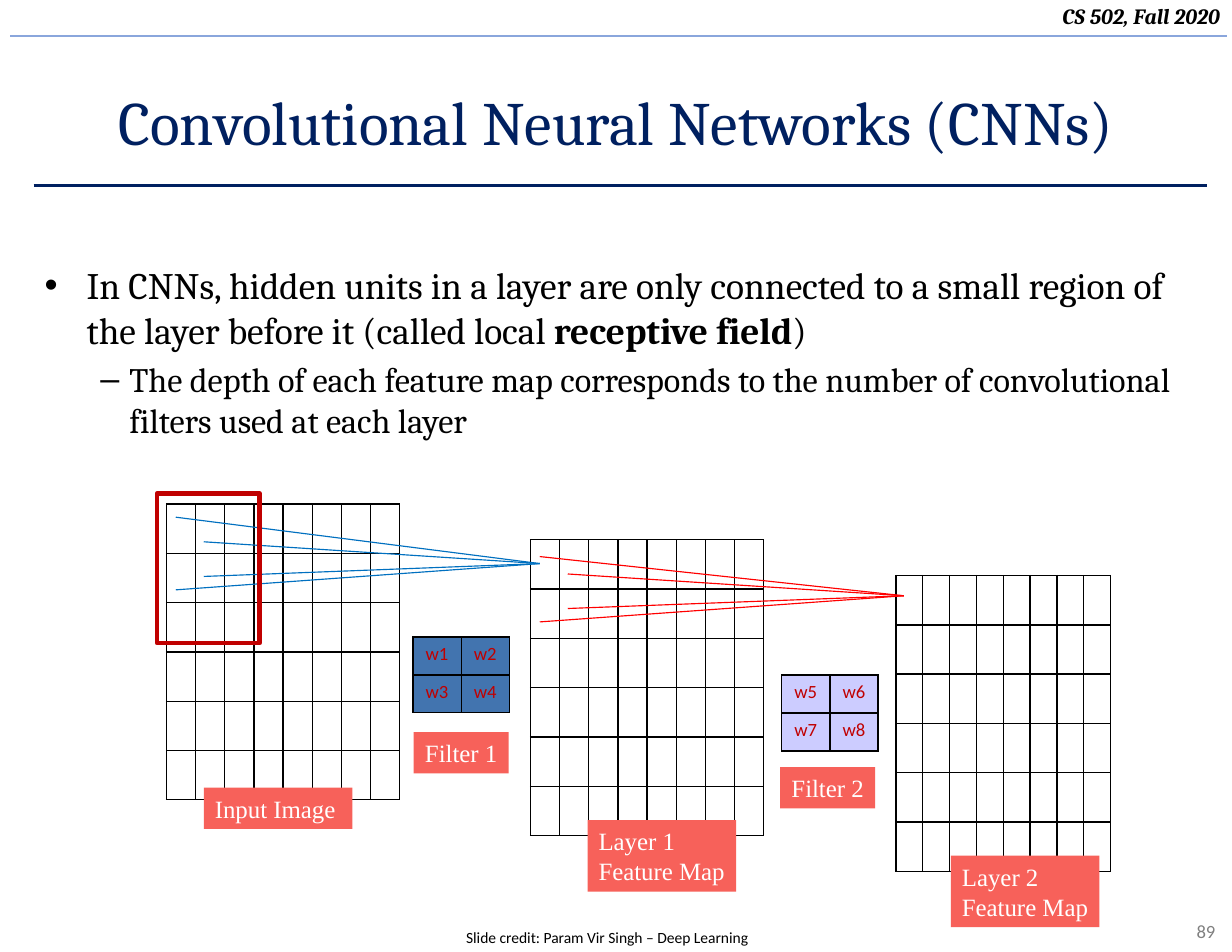
from lxml.etree import SubElement
from pptx import Presentation
from pptx.dml.color import RGBColor
from pptx.enum.shapes import MSO_CONNECTOR, MSO_SHAPE
from pptx.enum.text import MSO_ANCHOR, PP_ALIGN
from pptx.oxml import parse_xml
from pptx.oxml.ns import nsdecls, qn
from pptx.util import Pt

BLACK = RGBColor(0, 0, 0)
WHITE = RGBColor(255, 255, 255)
GRAY = RGBColor(0x80, 0x80, 0x80)
NAVY = RGBColor(0x00, 0x20, 0x60)
PALE = RGBColor(0x8A, 0xA6, 0xDC)
BLUE = RGBColor(0x00, 0x70, 0xC0)
RED = RGBColor(0xFF, 0x00, 0x00)
DARK = RGBColor(0xC0, 0x00, 0x00)
CORAL = RGBColor(0xF7, 0x61, 0x5A)
STEEL = RGBColor(0x42, 0x74, 0xAF)
LILAC = RGBColor(0xCC, 0xCC, 0xFF)

deck = Presentation()
deck.slide_width, deck.slide_height = Pt(792), Pt(612)
slide = deck.slides.add_slide(deck.slide_layouts[6])
shapes = slide.shapes


def write(para, text, size, face, color, bold=False, italic=False):
    run = para.add_run()
    run.text = text
    font = run.font
    font.size, font.name, font.color.rgb = Pt(size), face, color
    font.bold, font.italic = bold, italic


def draw(start, end, color, width):
    line = shapes.add_connector(MSO_CONNECTOR.STRAIGHT, *map(Pt, start + end))
    line.line.color.rgb = color
    line.line.width = Pt(width)
    SubElement(line._element.spPr, qn("a:effectLst"))


# Header, title, footer
draw((6.5, 23), (789, 23), PALE, 1.5)
draw((21.6, 119.5), (776.2, 119.5), NAVY, 2)
for text, box, align, size, face, color, strong in (
    ("CS 502, Fall 2020", (0, -2, 791.5, 24.5), PP_ALIGN.RIGHT, 14, "Cambria", BLACK, True),
    ("Convolutional Neural Networks (CNNs)", (0, 36, 792, 83), PP_ALIGN.CENTER,
     39.6, "Cambria", NAVY, False),
    ("89", (701.3, 587.5, 87.1, 21.6), PP_ALIGN.RIGHT, 12, "Calibri", GRAY, False),
    ("Slide credit: Param Vir Singh – Deep Learning", (118, 592.5, 544.5, 19.5),
     PP_ALIGN.CENTER, 10, "Calibri", BLACK, False),
):
    frame = shapes.add_textbox(*map(Pt, box)).text_frame
    frame.word_wrap = True
    frame.vertical_anchor = MSO_ANCHOR.MIDDLE
    para = frame.paragraphs[0]
    para.alignment = align
    write(para, text, size, face, color, strong, strong)

# Bullets
frame = shapes.add_textbox(Pt(21.6), Pt(165), Pt(754.6), Pt(140)).text_frame
frame.word_wrap = True
first, second = frame.paragraphs[0], frame.add_paragraph()
second.level = 1
second.space_before = Pt(4.4)
for para, left, hang, mark in ((first, 27, 27, "•"), (second, 54.5, 18.7, "–")):
    props = para._p.get_or_add_pPr()
    props.set("marL", str(Pt(left)))
    props.set("indent", str(-Pt(hang)))
    SubElement(props, qn("a:buFont"), typeface="Arial")
    SubElement(props, qn("a:buChar"), char=mark)
for text, bold in (
    ("In CNNs, hidden units in a layer are only connected to a small region of "
     "the layer before it (called local ", False),
    ("receptive field", True),
    (")", False),
):
    write(first, text, 24, "Cambria", BLACK, bold)
write(second, "The depth of each feature map corresponds to the number of "
      "convolutional filters used at each layer", 22, "Cambria", BLACK)

# Pixel grids and filters
EMPTY = [[""] * 8] * 6
for left, top, wide, high, words, fill in (
    (107, 324, 18.75, 31.7, EMPTY, None),
    (341, 347, 18.75, 31.7, EMPTY, None),
    (576, 370, 17.25, 31.7, EMPTY, None),
    (265.5, 409.5, 31, 24.4, [["w1", "w2"], ["w3", "w4"]], STEEL),
    (502.5, 434, 31, 24.4, [["w5", "w6"], ["w7", "w8"]], LILAC),
):
    rows, cols = len(words), len(words[0])
    table = shapes.add_table(rows, cols, Pt(left), Pt(top),
                             Pt(wide * cols), Pt(high * rows)).table
    table.first_row = table.horz_banding = False
    for col in table.columns:
        col.width = Pt(wide)
    for row, texts in zip(table.rows, words):
        row.height = Pt(high)
        for cell, text in zip(row.cells, texts):
            props = cell._tc.get_or_add_tcPr()
            for side in "LRTB":
                props.append(parse_xml(
                    f'<a:ln{side} {nsdecls("a")} w="{Pt(1)}"><a:solidFill>'
                    f'<a:srgbClr val="{BLACK}"/></a:solidFill></a:ln{side}>'))
            if fill is None:
                cell.fill.background()
                continue
            cell.fill.solid()
            cell.fill.fore_color.rgb = fill
            para = cell.text_frame.paragraphs[0]
            para.alignment = PP_ALIGN.CENTER
            write(para, text, 12, "Calibri", DARK)

# Links from each receptive field to one unit
for color, unit, starts in (
    (BLUE, (347, 362.3), ((113, 332.5), (131, 348.3), (131, 370.6), (113, 379.2))),
    (RED, (581, 383), ((347, 357.8), (365, 369), (365, 391.2), (347, 399.8))),
):
    for start in starts:
        draw(start, unit, color, 0.75)

# Labels
for lines, left, top, wide, high, align in (
    (["Input Image"], 131, 506.3, 95.5, 26.6, PP_ALIGN.LEFT),
    (["Layer 1", "Feature Map"], 377.7, 527.2, 95.5, 46, PP_ALIGN.LEFT),
    (["Layer 2", "Feature Map"], 611.3, 550, 95.5, 46, PP_ALIGN.LEFT),
    (["Filter 1"], 266, 470.7, 61, 26.6, PP_ALIGN.CENTER),
    (["Filter 2"], 501.6, 493.2, 61, 26.6, PP_ALIGN.CENTER),
):
    label = shapes.add_shape(MSO_SHAPE.RECTANGLE, Pt(left), Pt(top), Pt(wide), Pt(high))
    label.shadow.inherit = False
    label.fill.solid()
    label.fill.fore_color.rgb = CORAL
    label.line.fill.background()
    frame = label.text_frame
    frame.word_wrap = True
    frame.margin_right = Pt(0) if align == PP_ALIGN.LEFT else Pt(4)
    frame.margin_left = Pt(7.2) if align == PP_ALIGN.LEFT else Pt(4)
    para = frame.paragraphs[0]
    para.alignment = align
    for spot, text in enumerate(lines):
        if spot:
            para.add_line_break()
        write(para, text, 16, "Times New Roman", WHITE)

field = shapes.add_shape(MSO_SHAPE.RECTANGLE, Pt(101), Pt(317.3), Pt(66), Pt(96))
field.shadow.inherit = False
field.fill.background()
field.line.color.rgb = DARK
field.line.width = Pt(3)

deck.save("out.pptx")
